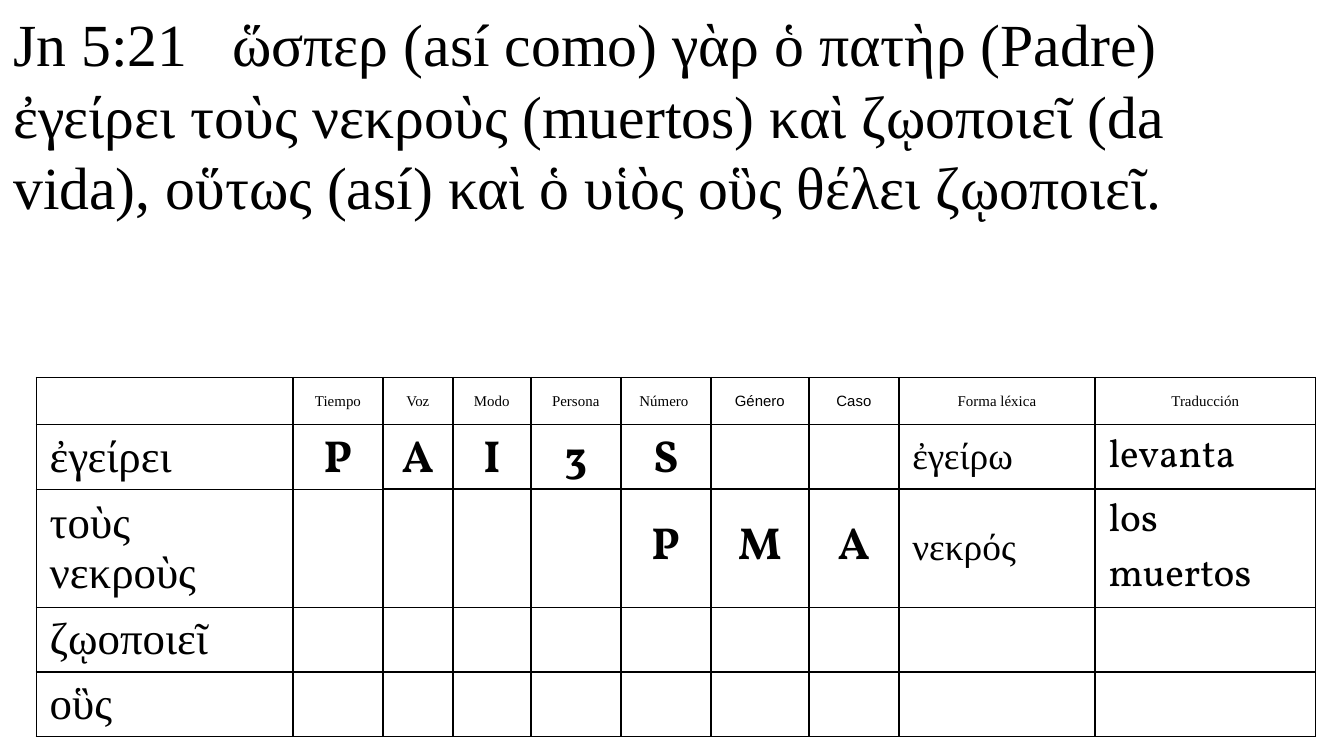
from dataclasses import dataclass

from lxml.etree import SubElement
from pptx import Presentation
from pptx.dml.color import RGBColor
from pptx.enum.text import MSO_ANCHOR, PP_ALIGN
from pptx.oxml.ns import qn
from pptx.util import Inches, Pt


# Colours, fonts and type sizes
@dataclass(frozen=True)
class Theme:
    ink: str = "000000"
    serif: str = "Times New Roman"
    sans: str = "Arial"
    answer: str = "Vollkorn"
    verse: int = 32
    head: int = 8
    word: int = 24
    lemma: int = 20
    gloss: int = 21
    thick: float = 1
    thin: float = 0.75


def write(frame, text, font, size, color, bold=False, align=PP_ALIGN.LEFT):
    """Put one formatted paragraph in a text frame."""
    para = frame.paragraphs[0]
    para.alignment = align
    if not text:
        para._p.get_or_add_endParaRPr().set("sz", str(size * 100))
        return
    run = para.add_run()
    run.text = text
    run.font.name = font
    run.font.size = Pt(size)
    run.font.bold = bold
    run.font.color.rgb = RGBColor.from_string(color)


class Page:
    def __init__(self, deck, theme):
        self.theme = theme
        self.slide = deck.slides.add_slide(deck.slide_layouts[6])

    def text(self, text, left, top, width, height, size):
        box = self.slide.shapes.add_textbox(
            Inches(left), Inches(top), Inches(width), Inches(height))
        box.text_frame.word_wrap = True
        write(box.text_frame, text, self.theme.serif, size, self.theme.ink)

    def style(self, row, col):
        """Text format of a cell, by its place in the table."""
        t = self.theme
        if row == 0:
            font = t.sans if col in (6, 7) else t.serif
            return dict(font=font, size=t.head, align=PP_ALIGN.CENTER)
        if col == 0:
            return dict(font=t.serif, size=t.word)
        if col == 8:
            return dict(font=t.serif, size=t.lemma)
        if col == 9:
            return dict(font=t.answer, size=t.gloss)
        return dict(font=t.answer, size=t.word, bold=True,
                    align=PP_ALIGN.CENTER)

    def border(self, cell, row, col):
        props = cell._tc.get_or_add_tcPr()
        inner = self.theme.thin if col < 2 else self.theme.thick
        widths = {"L": self.theme.thick, "R": self.theme.thick,
                  "T": inner if row else self.theme.thick, "B": inner}
        for side, width in widths.items():
            line = SubElement(props, qn(f"a:ln{side}"), w=str(Pt(width)))
            fill = SubElement(line, qn("a:solidFill"))
            SubElement(fill, qn("a:srgbClr"), val=self.theme.ink)

    def table(self, rows, left, top, widths, heights):
        frame = self.slide.shapes.add_table(
            len(heights), len(widths), Inches(left), Inches(top),
            Inches(sum(widths)), Inches(sum(heights)))
        grid = frame.table
        grid.first_row = grid.horz_banding = False
        for col, width in zip(grid.columns, widths):
            col.width = Inches(width)
        for line, height in zip(grid.rows, heights):
            line.height = Inches(height)
        for r, texts in enumerate(rows):
            for c, text in enumerate(texts):
                cell = grid.cell(r, c)
                cell.vertical_anchor = MSO_ANCHOR.MIDDLE
                cell.margin_left = cell.margin_right = Inches(0.1)
                cell.margin_top = cell.margin_bottom = Inches(0.04)
                self.border(cell, r, c)
                cell.fill.background()
                write(cell.text_frame, text, color=self.theme.ink,
                      **self.style(r, c))


VERSE = ("Jn 5:21   ὥσπερ (así como) γὰρ ὁ πατὴρ (Padre) ἐγείρει τοὺς "
         "νεκροὺς (muertos) καὶ ζῳοποιεῖ (da vida), οὕτως (así) καὶ ὁ υἱὸς "
         "οὓς θέλει ζῳοποιεῖ.")

HEADS = ["", "Tiempo", "Voz", "Modo", "Persona", "Número ", "Género", "Caso",
         "Forma léxica", "Traducción"]
BLANK = [""] * 9
PARSED = [
    HEADS,
    ["ἐγείρει", *"PAI3S", "", "", "ἐγείρω", "levanta"],
    ["τοὺς νεκροὺς", "", "", "", "", *"PMA", "νεκρός", "los muertos"],
    ["ζῳοποιεῖ", *BLANK],
    ["οὓς", *BLANK],
]
WIDTHS = [1.91, 0.67, 0.52, 0.58, 0.67, 0.67, 0.73, 0.67, 1.46, 1.64]
HEIGHTS = [0.35, 0.47, 0.87, 0.47, 0.47]


def main():
    deck = Presentation()
    # Widescreen, 16 to 9
    deck.slide_width = Inches(10)
    deck.slide_height = deck.slide_width * 9 // 16
    theme = Theme()
    page = Page(deck, theme)

    # Verse with glosses
    page.text(VERSE, 0, 0, 9.8, 1.95, theme.verse)

    # Parsing exercise
    page.table(PARSED, 0.27, 2.81, WIDTHS, HEIGHTS)

    deck.save("out.pptx")


if __name__ == "__main__":
    main()
